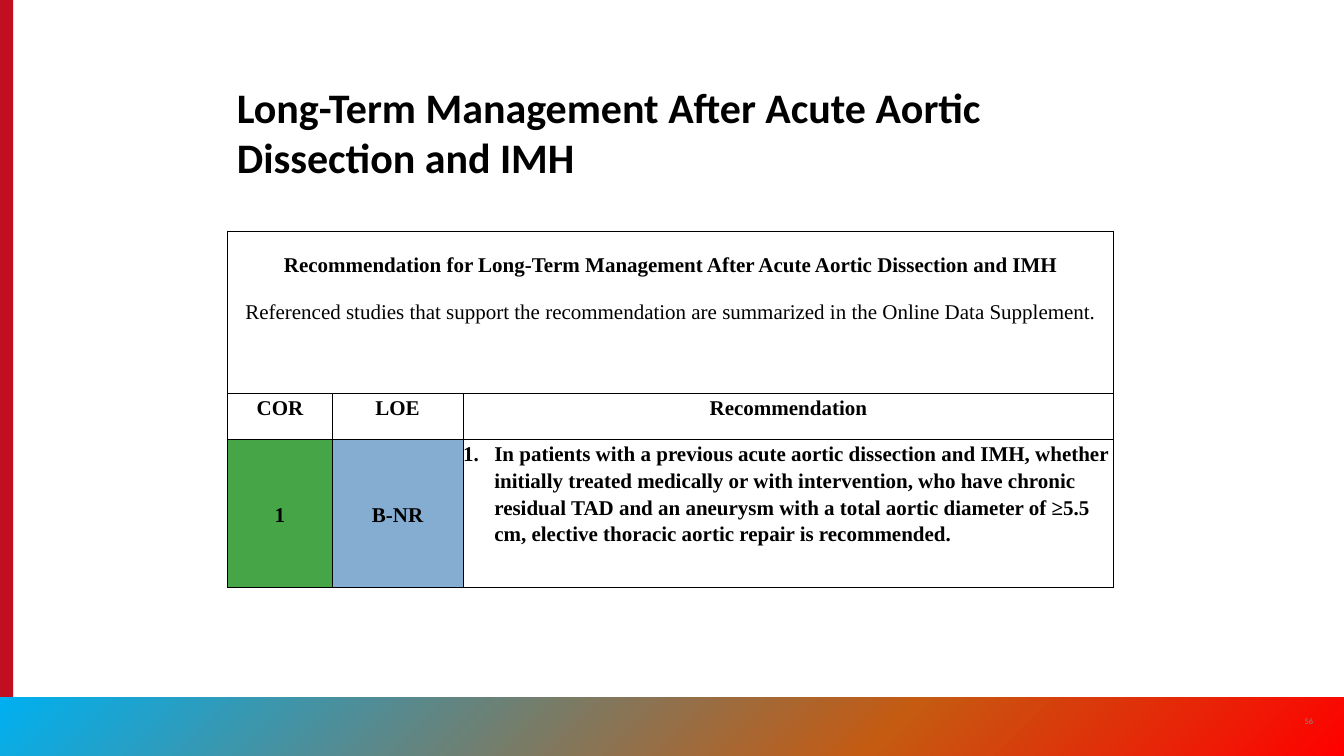
from copy import deepcopy

from lxml.etree import SubElement
from pptx import Presentation
from pptx.dml.color import RGBColor
from pptx.enum.shapes import MSO_SHAPE
from pptx.enum.text import MSO_ANCHOR, PP_ALIGN
from pptx.oxml.ns import qn
from pptx.util import Inches, Pt

COLORS = {
    "red_bar": "C10E21", "sky": "00B0F0", "rust": "C55A11", "red": "FF0000",
    "number": "8A8B8A", "black": "000000", "green": "45A547", "blue": "85ADD1",
}


def style_text(paragraph, font_name, size, color, bold=False):
    font = paragraph.font
    font.name, font.size, font.bold = font_name, Pt(size), bold
    font.color.rgb = RGBColor.from_string(COLORS[color])


def add_borders(cell):
    properties = cell._tc.get_or_add_tcPr()
    for side in ("a:lnL", "a:lnR", "a:lnT", "a:lnB"):
        line = SubElement(properties, qn(side), w=str(Pt(1)))
        fill = SubElement(line, qn("a:solidFill"))
        SubElement(fill, qn("a:srgbClr"), val=COLORS["black"])


prs = Presentation()
prs.slide_width, prs.slide_height = Inches(26.67), Inches(15)
slide = prs.slides.add_slide(prs.slide_layouts[6])

# Side bar and footer band
side_bar = slide.shapes.add_shape(MSO_SHAPE.RECTANGLE, 0, 0, Inches(0.26), Inches(15))
footer = slide.shapes.add_shape(
    MSO_SHAPE.RECTANGLE, 0, Inches(13.83), Inches(26.67), Inches(1.17))
for band in (side_bar, footer):
    band.shadow.inherit = False
    band.line.fill.background()
side_bar.fill.solid()
side_bar.fill.fore_color.rgb = RGBColor.from_string(COLORS["red_bar"])

footer.fill.gradient()
footer.fill.gradient_angle = 315
stop_list = footer._element.spPr.find(qn("a:gradFill")).find(qn("a:gsLst"))
stop_list.append(deepcopy(stop_list[-1]))
gradient = [(0, "sky"), (0.66, "rust"), (1, "red")]
for stop, (position, color) in zip(footer.fill.gradient_stops, gradient):
    stop.position = position
    stop.color.rgb = RGBColor.from_string(COLORS[color])

# Slide number and title
texts = [
    ("56", (25.79, 14.12, 0.37, 0.36), 12, "number", False, PP_ALIGN.CENTER, MSO_ANCHOR.MIDDLE),
    ("Long-Term Management After Acute Aortic Dissection and IMH",
     (4.62, 1.53, 17.43, 2.17), 60, "black", True, PP_ALIGN.LEFT, MSO_ANCHOR.TOP),
]
for text, place, size, color, bold, alignment, anchor in texts:
    frame = slide.shapes.add_textbox(*map(Inches, place)).text_frame
    frame.margin_left = frame.margin_right = Inches(0.08)
    frame.margin_top = frame.margin_bottom = Inches(0.08)
    frame.word_wrap = bold
    frame.vertical_anchor = anchor
    frame.text = text
    frame.paragraphs[0].alignment = alignment
    style_text(frame.paragraphs[0], "Calibri", size, color, bold)

# Recommendation table
rows = [
    ["Recommendation for Long-Term Management After Acute Aortic Dissection and IMH\n"
     "Referenced studies that support the recommendation are summarized in the "
     "Online Data Supplement.", "", ""],
    ["COR", "LOE", "Recommendation"],
    ["1", "B-NR",
     "In patients with a previous acute aortic dissection and IMH, whether initially "
     "treated medically or with intervention, who have chronic residual TAD and an "
     "aneurysm with a total aortic diameter of ≥5.5 cm, elective thoracic aortic "
     "repair is recommended."],
]
grades = {(2, 0): "green", (2, 1): "blue"}

table = slide.shapes.add_table(
    3, 3, Inches(4.52), Inches(4.58), Inches(17.58), Inches(7.07)).table
table.first_row = table.horz_banding = False
for column, width in zip(table.columns, (2.07, 2.6, 12.91)):
    column.width = Inches(width)
for row, height in zip(table.rows, (3.22, 0.92, 2.93)):
    row.height = Inches(height)
table.cell(0, 0).merge(table.cell(0, 2))

for r, row in enumerate(rows):
    for c, text in enumerate(row):
        cell = table.cell(r, c)
        add_borders(cell)
        cell.margin_left = cell.margin_right = cell.margin_top = cell.margin_bottom = 0
        if (r, c) in grades:
            cell.fill.solid()
            cell.fill.fore_color.rgb = RGBColor.from_string(COLORS[grades[r, c]])
            cell.vertical_anchor = MSO_ANCHOR.MIDDLE
        else:
            cell.fill.background()
        if cell.is_spanned:
            continue
        cell.text_frame.text = text
        for i, paragraph in enumerate(cell.text_frame.paragraphs):
            paragraph.alignment = PP_ALIGN.CENTER
            paragraph.line_spacing = 2.0 if r == 0 else 1.15
            if (r, c) == (2, 2):
                paragraph.alignment = PP_ALIGN.LEFT
                numbering = paragraph._p.get_or_add_pPr()
                numbering.set("marL", str(Inches(0.62)))
                numbering.set("indent", str(-Inches(0.62)))
                SubElement(numbering, qn("a:buFont"), typeface="+mj-lt")
                SubElement(numbering, qn("a:buAutoNum"), type="arabicPeriod")
            style_text(paragraph, "Times New Roman", 30, "black", bold=i == 0)

prs.save("out.pptx")
